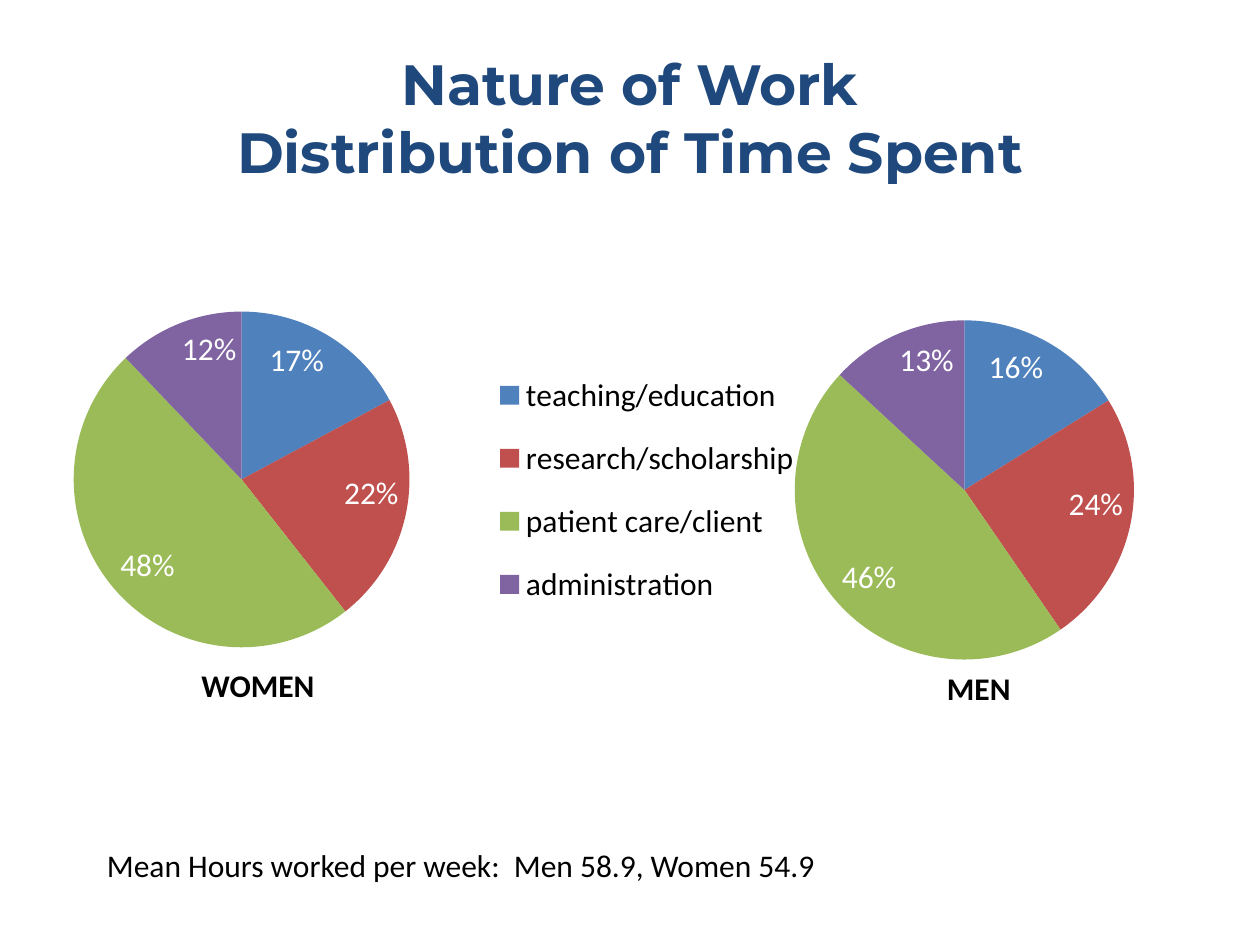
from dataclasses import dataclass
from lxml.etree import SubElement
from pptx import Presentation
from pptx.chart.data import CategoryChartData
from pptx.dml.color import RGBColor
from pptx.enum.chart import XL_CHART_TYPE, XL_LABEL_POSITION, XL_LEGEND_POSITION
from pptx.enum.text import MSO_ANCHOR, MSO_AUTO_SIZE, PP_ALIGN
from pptx.oxml.ns import qn
from pptx.util import Inches, Pt


@dataclass(frozen=True)
class Theme:
    head: str = "Montserrat"
    body: str = "Calibri"
    big: float = 32.4
    base: float = 18
    navy: str = "1F497D"
    ink: str = "000000"
    pale: str = "FFFFFF"
    hues: tuple = ("4F81BD", "C0504D", "9BBB59", "8064A2")


LOOK = Theme()
COLS, ROWS = 120, 90
WIDE, HIGH = Inches(10), Inches(7.5)
TASKS = ("teaching/education", "research/scholarship", "patient care/client", "administration")


def place(box):
    col, row, cols, rows = box
    return [int(n) for n in (WIDE * col / COLS, HIGH * row / ROWS,
                             WIDE * cols / COLS, HIGH * rows / ROWS)]


def apply(item, form):
    for name, value in form.items():
        setattr(item, name, value)


def style(font, color, size=LOOK.base, face=LOOK.body, bold=False):
    apply(font, {"name": face, "size": Pt(size), "bold": bold})
    font.color.rgb = RGBColor.from_string(color)


def add_text(slide, box, text, form, color=LOOK.ink, align=PP_ALIGN.LEFT, **font):
    frame = slide.shapes.add_textbox(*place(box)).text_frame
    apply(frame, {"word_wrap": True, **form})
    line = frame.paragraphs[0]
    apply(line, {"text": text, "alignment": align})
    for run in line.runs:
        style(run.font, color, **font)


def add_title(slide, box):
    add_text(slide, box, "Nature of Work\vDistribution of Time Spent",
             {"vertical_anchor": MSO_ANCHOR.MIDDLE}, LOOK.navy, PP_ALIGN.CENTER,
             size=LOOK.big, face=LOOK.head, bold=True)


def add_note(slide, box, text, bold=False):
    add_text(slide, box, text, {"auto_size": MSO_AUTO_SIZE.SHAPE_TO_FIT_TEXT}, bold=bold)


def set_layout(node, area, index, inner=False):
    layout = node.find(qn("c:layout"))
    if layout is None:
        layout = SubElement(node, qn("c:layout"))
        node.insert(index, layout)
    manual = SubElement(layout, qn("c:manualLayout"))
    pairs = [("layoutTarget", "inner")] if inner else []
    pairs += [("xMode", "edge"), ("yMode", "edge"), *zip("xywh", area)]
    for tag, value in pairs:
        SubElement(manual, qn(f"c:{tag}")).set("val", str(value))


def add_pie(slide, box, values, area, key=None):
    data = CategoryChartData()
    data.categories = TASKS
    data.add_series("Series 1", values)
    chart = slide.shapes.add_chart(XL_CHART_TYPE.PIE, *place(box), data).chart
    apply(chart, {"has_title": False, "has_legend": key is not None})
    style(chart.font, LOOK.ink)
    plot = chart.plots[0]
    apply(plot, {"vary_by_categories": True, "has_data_labels": True})
    apply(plot.data_labels, {"show_value": True, "show_percentage": False,
                             "number_format": '0"%"', "number_format_is_linked": False,
                             "position": XL_LABEL_POSITION.INSIDE_END})
    style(plot.data_labels.font, LOOK.pale)
    for spot, color in enumerate(LOOK.hues):
        fill = plot.series[0].points[spot].format.fill
        fill.solid()
        fill.fore_color.rgb = RGBColor.from_string(color)
    root = chart.element.find(qn("c:chart"))
    set_layout(root.find(qn("c:plotArea")), area, 0, True)
    if key:
        apply(chart.legend, {"position": XL_LEGEND_POSITION.RIGHT, "include_in_layout": False})
        style(chart.legend.font, LOOK.ink)
        set_layout(root.find(qn("c:legend")), key, 1)


def main():
    deck = Presentation()
    apply(deck, {"slide_width": WIDE, "slide_height": HIGH})
    slide = deck.slides.add_slide(deck.slide_layouts[6])
    add_title(slide, (6, 3.6, 108, 15))
    add_pie(slide, (0, 24, 78, 39.4), (17, 22, 48, 12),
            (0.09, 0.14, 0.41, 0.82), (0.59, 0.24, 0.4, 0.67))
    add_pie(slide, (60, 25, 65, 39.4), (16, 24, 46, 13), (0.24, 0.14, 0.5, 0.82))
    add_note(slide, (18, 62.8, 32, 4.8), "WOMEN", True)
    add_note(slide, (89, 63.1, 32, 4.8), "MEN", True)
    add_note(slide, (9, 80, 98, 5), "Mean Hours worked per week:  Men 58.9, Women 54.9")
    deck.save("out.pptx")


if __name__ == "__main__":
    main()
